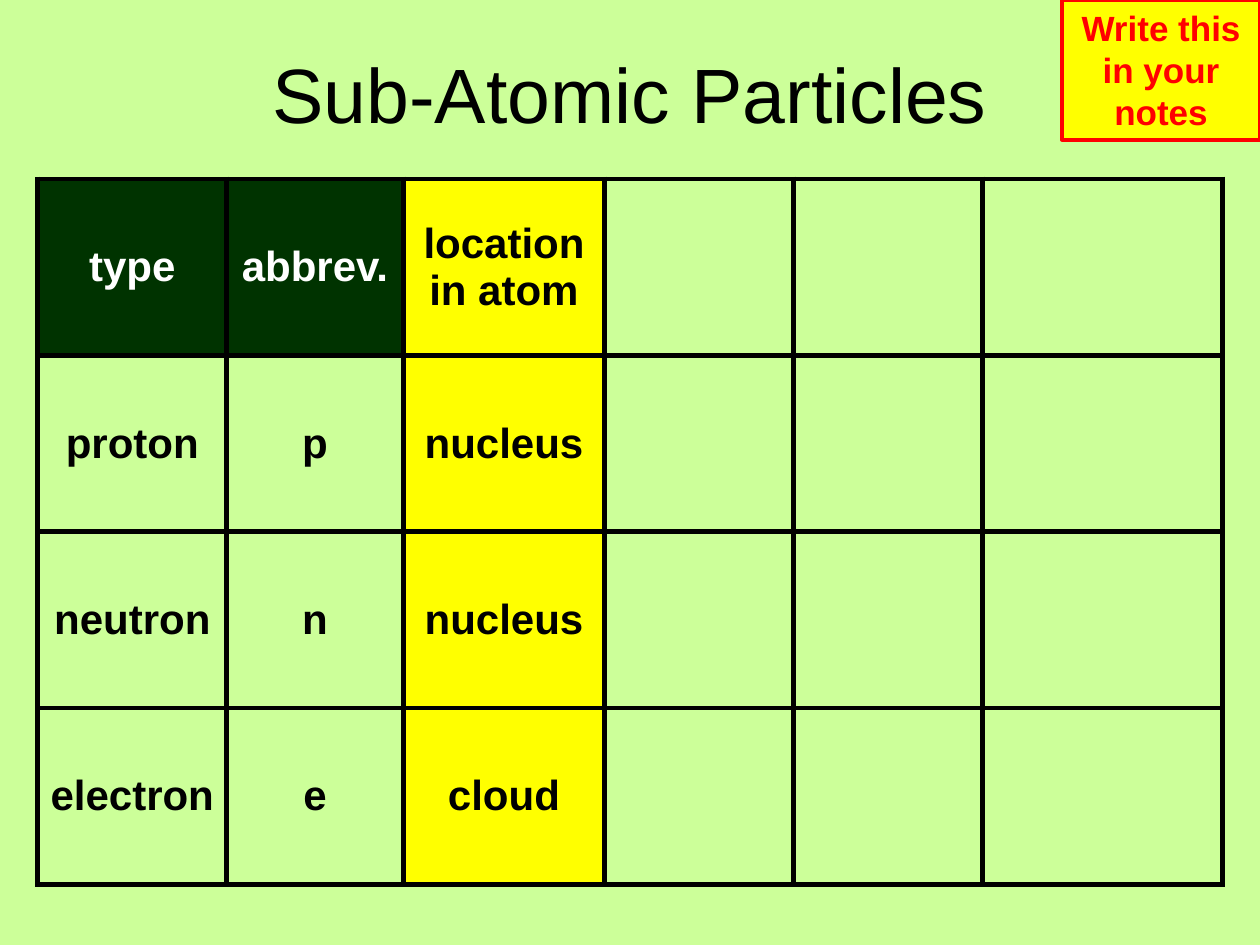
from lxml.etree import SubElement
from pptx import Presentation
from pptx.dml.color import RGBColor
from pptx.enum.shapes import MSO_SHAPE as Shape
from pptx.enum.text import MSO_ANCHOR as Anchor, PP_ALIGN as Align
from pptx.oxml.ns import qn
from pptx.util import Inches, Pt

TITLE = "Sub-Atomic Particles"
REMINDER = "Write this in your notes"
PARTICLES = [
    ("type", "abbrev.", "location in atom"),
    ("proton", "p", "nucleus"),
    ("neutron", "n", "nucleus"),
    ("electron", "e", "cloud"),
]
COLUMN_WIDTHS = [1.5, 1.4, 1.6, 1.5, 1.5, 1.9]
ROW_HEIGHT = 1.4
LOCATION_COLUMN = 2
WIDTH, HEIGHT = 10, 7.5
COLORS = {"background": "CCFF99", "header": "003300", "highlight": "FFFF00",
          "alert": "FF0000", "text": "000000", "header_text": "FFFFFF"}


def color(name):
    return RGBColor.from_string(COLORS[name])


def write(frame, text, size, ink, bold=True):
    frame.word_wrap = True
    frame.vertical_anchor = Anchor.MIDDLE
    paragraph = frame.paragraphs[0]
    paragraph.text = text
    paragraph.alignment = Align.CENTER
    font = paragraph.font
    font.name, font.size, font.bold = "Arial", Pt(size), bold
    font.color.rgb = color(ink)


def draw_borders(cell, width):
    """Outline all four sides; must run before the fill is set."""
    properties = cell._tc.get_or_add_tcPr()
    for side in ("lnL", "lnR", "lnT", "lnB"):
        line = SubElement(properties, qn(f"a:{side}"), w=str(Pt(width)))
        fill = SubElement(line, qn("a:solidFill"))
        SubElement(fill, qn("a:srgbClr"), val=COLORS["text"])


def cell_style(row, column):
    """Return the fill (None for no fill) and text colour of a cell."""
    if column == LOCATION_COLUMN:
        return "highlight", "text"
    if row == 0 and column < LOCATION_COLUMN:
        return "header", "header_text"
    return None, "text"


def add_particle_table(slide, top):
    table_width = sum(COLUMN_WIDTHS)
    table = slide.shapes.add_table(
        len(PARTICLES), len(COLUMN_WIDTHS),
        Inches((WIDTH - table_width) / 2), Inches(top),
        Inches(table_width), Inches(ROW_HEIGHT * len(PARTICLES))).table
    table.first_row = table.horz_banding = False
    for column, width in zip(table.columns, COLUMN_WIDTHS):
        column.width = Inches(width)
    for r, words in enumerate(PARTICLES):
        table.rows[r].height = Inches(ROW_HEIGHT)
        for c in range(len(COLUMN_WIDTHS)):
            cell = table.cell(r, c)
            draw_borders(cell, 3)
            fill, ink = cell_style(r, c)
            if fill:
                cell.fill.solid()
                cell.fill.fore_color.rgb = color(fill)
            else:
                cell.fill.background()
            if c < len(words):
                cell.vertical_anchor = Anchor.MIDDLE
                write(cell.text_frame, words[c], 24, ink)


def add_reminder(slide, width, height):
    reminder = slide.shapes.add_shape(
        Shape.RECTANGLE, Inches(WIDTH - width), 0, Inches(width), Inches(height))
    reminder.shadow.inherit = False
    reminder.fill.solid()
    reminder.fill.fore_color.rgb = color("highlight")
    reminder.line.color.rgb = color("alert")
    reminder.line.width = Pt(2.25)
    write(reminder.text_frame, REMINDER, 20, "alert")


def main():
    deck = Presentation()
    deck.slide_width, deck.slide_height = Inches(WIDTH), Inches(HEIGHT)
    slide = deck.slides.add_slide(deck.slide_layouts[6])
    slide.background.fill.solid()
    slide.background.fill.fore_color.rgb = color("background")
    title = slide.shapes.add_textbox(
        Inches(0.5), Inches(0.3), Inches(WIDTH - 1), Inches(0.87))
    write(title.text_frame, TITLE, 44, "text", bold=False)
    add_particle_table(slide, top=1.42)
    add_reminder(slide, width=1.57, height=1.11)
    deck.save("out.pptx")


if __name__ == "__main__":
    main()
